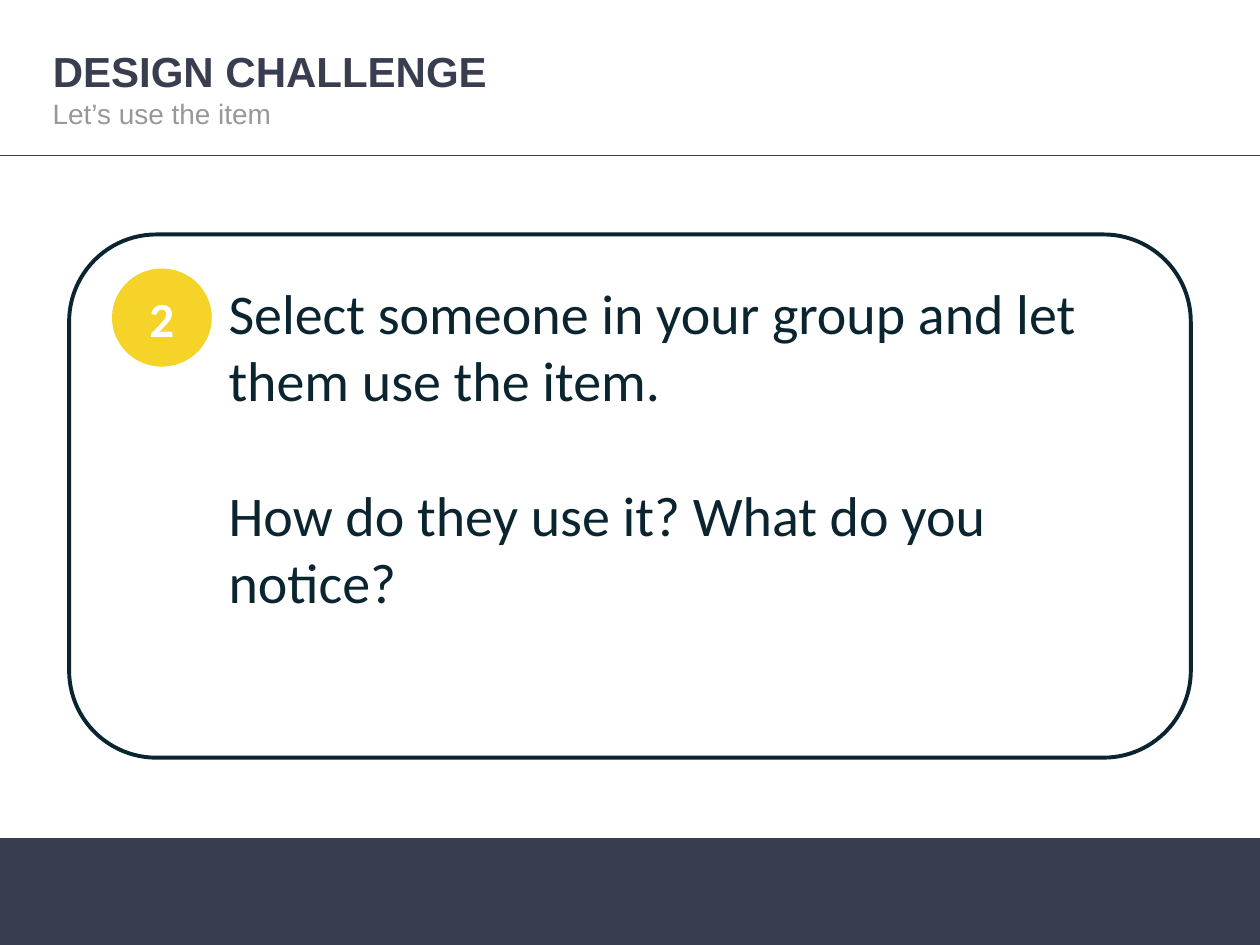
from lxml.etree import SubElement
from pptx import Presentation
from pptx.dml.color import RGBColor
from pptx.enum.shapes import MSO_CONNECTOR, MSO_SHAPE
from pptx.enum.text import MSO_ANCHOR, MSO_AUTO_SIZE, PP_ALIGN
from pptx.oxml.ns import qn
from pptx.util import Pt

SLATE = RGBColor(0x38, 0x3E, 0x4F)
GRAY = RGBColor(0x98, 0x98, 0x98)
INK = RGBColor(0x0A, 0x25, 0x2F)
GOLD = RGBColor(0xF5, 0xD3, 0x28)
WHITE = RGBColor(0xFF, 0xFF, 0xFF)

WIDE, HIGH = 720, 540
HEAD = {"name": "Arial", "size": Pt(24), "bold": True, "color": SLATE}
SUB = {"name": "Arial", "size": Pt(16), "color": GRAY}
BODY = {"name": "Calibri", "size": Pt(32), "color": INK}
MARK = {"name": "Calibri", "size": Pt(28), "bold": True, "color": WHITE}


def place(shape, left, top, width, height):
    box = {"left": left, "top": top, "width": width, "height": height}
    for key, value in box.items():
        setattr(shape, key, Pt(value))


def write(shape, lines, style, align=PP_ALIGN.LEFT, anchor=MSO_ANCHOR.TOP, gap=0):
    frame = shape.text_frame
    frame.word_wrap = True
    frame.auto_size = MSO_AUTO_SIZE.NONE
    frame.vertical_anchor = anchor
    frame.text = "\n".join(lines)
    for index, para in enumerate(frame.paragraphs):
        para.alignment = align
        para.space_before = Pt(gap if index else 0)
        for key, value in style.items():
            if key == "color":
                para.font.color.rgb = value
            else:
                setattr(para.font, key, value)


def add_form(slide, kind, box, fill, line=None, weight=0.75):
    shape = slide.shapes.add_shape(kind, *map(Pt, box))
    shape.shadow.inherit = False
    shape.fill.solid()
    shape.fill.fore_color.rgb = fill
    if line is None:
        shape.line.fill.background()
    else:
        shape.line.color.rgb = line
        shape.line.width = Pt(weight)
    return shape


def add_text(slide, box, lines, style, **extra):
    write(slide.shapes.add_textbox(*map(Pt, box)), lines, style, **extra)


def add_head(slide, box, title, note):
    left, top, width, height = box
    # Rule below the heading
    base = Pt(top + height)
    rule = slide.shapes.add_connector(MSO_CONNECTOR.STRAIGHT, 0, base, Pt(WIDE), base)
    rule.line.color.rgb = SLATE
    rule.line.width = Pt(0.75)
    SubElement(rule.element.spPr, qn("a:effectLst"))
    # Title and subtitle
    place(slide.shapes.title, left, top, width, height)
    write(slide.shapes.title, [title], HEAD)
    add_text(slide, (left, top + 29, width, 36), [note], SUB)


def add_card(slide, box, mark, lines):
    left, top, width, height = box
    # Rounded frame
    add_form(slide, MSO_SHAPE.ROUNDED_RECTANGLE, box, WHITE, INK, 2.25)
    # Task, with one line of space between its parts
    add_text(slide, (left + 84, top + 21.5, width - 133, height - 59),
             lines, BODY, gap=38.5)
    # Number badge
    badge = add_form(slide, MSO_SHAPE.OVAL, (left + 24.5, top + 19.5, 57, 56), GOLD)
    write(badge, [mark], MARK, PP_ALIGN.CENTER, MSO_ANCHOR.MIDDLE)


def add_foot(slide, box):
    add_form(slide, MSO_SHAPE.RECTANGLE, box, SLATE, SLATE)


def main():
    deck = Presentation()
    deck.slide_width, deck.slide_height = Pt(WIDE), Pt(HIGH)
    slide = deck.slides.add_slide(deck.slide_layouts[5])
    add_foot(slide, (0, 479, WIDE, HIGH - 479))
    add_head(slide, (23, 22.5, 440, 66.5), "DESIGN CHALLENGE", "Let’s use the item")
    add_card(slide, (39.5, 134, 641, 299), "2", [
        "Select someone in your group and let them use the item.",
        "How do they use it? What do you notice?",
    ])
    deck.save("out.pptx")


if __name__ == "__main__":
    main()
